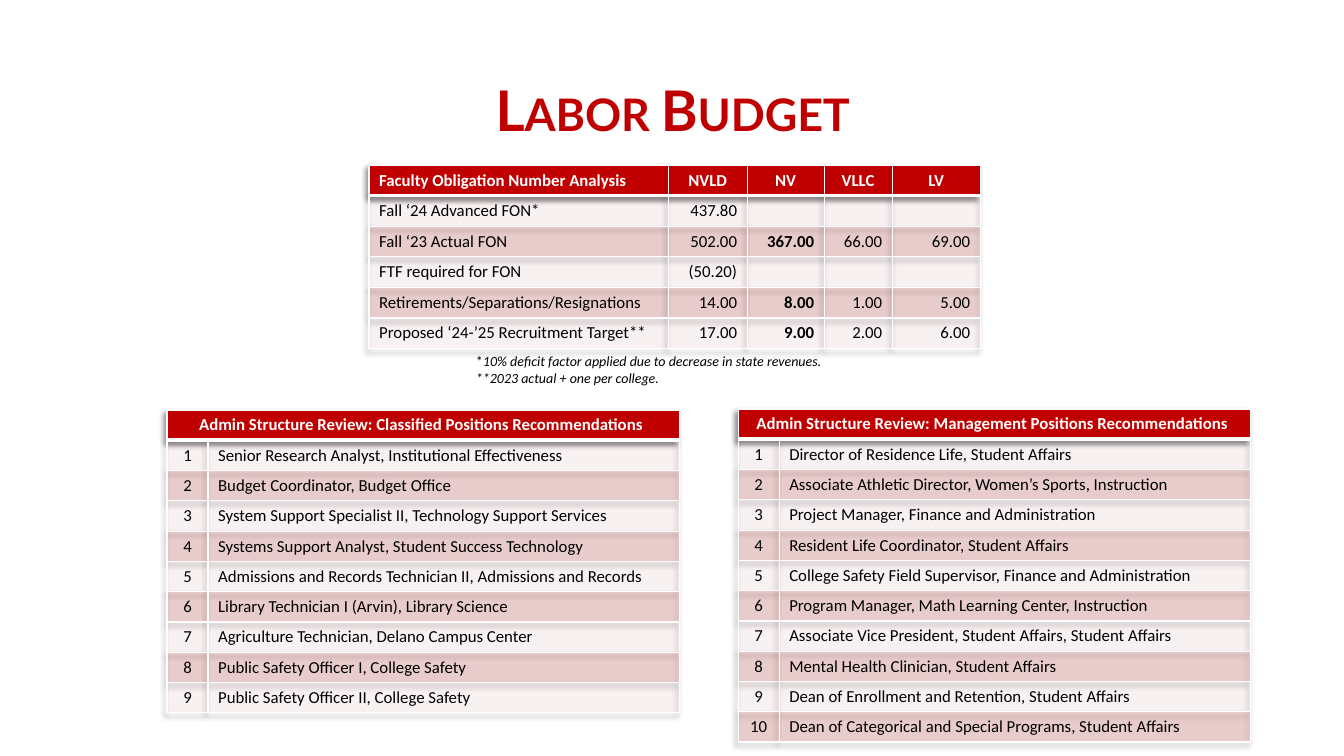
from pptx import Presentation
from pptx import util as u
from pptx.dml.color import RGBColor
from pptx.enum import text
from pptx.oxml import parse_xml
from pptx.oxml.ns import nsdecls

PX = 914400 / 100.8
THEME = {
    "red": "C00000", "white": "FFFFFF", "black": "000000",
    "heading": "Lato", "body": "Calibri",
    "title_size": 40, "table_size": 12, "note_size": 10,
    "odd_alpha": 4, "even_alpha": 15,
}
ROW = 30
LEFT, CENTER, RIGHT = text.PP_ALIGN.LEFT, text.PP_ALIGN.CENTER, text.PP_ALIGN.RIGHT


def write(paragraph, content, size=THEME["table_size"], font=THEME["body"],
          color=THEME["black"], bold=False, italic=False, align=LEFT):
    paragraph.alignment = align
    if not content:
        paragraph._p.append(parse_xml(f'<a:endParaRPr {nsdecls("a")} sz="{size * 100}"/>'))
        return None
    run = paragraph.add_run()
    run.text = content
    run.font.size = u.Pt(size)
    run.font.name = font
    run.font.color.rgb = RGBColor.from_string(color)
    run.font.bold = bold
    run.font.italic = italic
    return run


def add_grid(left, top, widths, rows, aligns, header_aligns, bold_column=None, merge_header=False):
    frame = slide.shapes.add_table(len(rows), len(widths), *[
        round(n * PX) for n in (left, top, sum(widths), ROW * len(rows))])
    grid = frame.table
    grid._tbl.tblPr.insert(0, parse_xml(
        f'<a:effectLst {nsdecls("a")}><a:outerShdw blurRad="50800" dist="38100" dir="8100000" '
        'algn="tr" rotWithShape="0"><a:prstClr val="black"><a:alpha val="40000"/></a:prstClr>'
        '</a:outerShdw></a:effectLst>'))
    for column, width in zip(grid.columns, widths):
        column.width = round(width * PX)
    if merge_header:
        grid.cell(0, 0).merge(grid.cell(0, len(widths) - 1))
    for r, row in enumerate(rows):
        grid.rows[r].height = round(ROW * PX)
        for c, content in enumerate(row):
            cell = grid.cell(r, c)
            header = r == 0
            write(cell.text_frame.paragraphs[0], content,
                  color=THEME["white" if header else "black"],
                  bold=header or c == bold_column,
                  align=(header_aligns if header else aligns)[c])
            cell.fill.solid()
            cell.fill.fore_color.rgb = RGBColor.from_string(THEME["red"])
            props = cell._tc.get_or_add_tcPr()
            if header:
                cell.vertical_anchor = text.MSO_ANCHOR.MIDDLE
            else:
                alpha = THEME["odd_alpha" if r % 2 else "even_alpha"]
                props[0][0].append(parse_xml(f'<a:alpha {nsdecls("a")} val="{alpha * 1000}"/>'))
            for i, side in enumerate("LRTB"):
                heavy = (header and side == "B") or (r == 1 and side == "T")
                props.insert(i, parse_xml(
                    f'<a:ln{side} {nsdecls("a")} w="{u.Pt(3 if heavy else 1)}"><a:solidFill>'
                    f'<a:srgbClr val="{THEME["white"]}"/></a:solidFill></a:ln{side}>'))


deck = Presentation()
deck.slide_width, deck.slide_height = u.Inches(13.33), u.Inches(7.5)
slide = deck.slides.add_slide(deck.slide_layouts[5])

heading = slide.shapes.title
heading.left, heading.top, heading.width, heading.height = [
    round(n * PX) for n in (93, 40, 1159, 146)]
heading.text_frame.auto_size = text.MSO_AUTO_SIZE.NONE
heading.text_frame.vertical_anchor = text.MSO_ANCHOR.MIDDLE
heading_line = heading.text_frame.paragraphs[0]
heading_line.line_spacing = 0.9
heading_run = write(heading_line, "Labor Budget", size=THEME["title_size"], font=THEME["heading"],
                    color=THEME["red"], bold=True, align=CENTER)
heading_run.font._element.set("cap", "small")

faculty_obligation = [
    ("Faculty Obligation Number Analysis", "NVLD", "NV", "VLLC", "LV"),
    ("Fall ‘24 Advanced FON*", "437.80", "", "", ""),
    ("Fall ‘23 Actual FON", "502.00", "367.00", "66.00", "69.00"),
    ("FTF required for FON", "(50.20)", "", "", ""),
    ("Retirements/Separations/Resignations", "14.00", "8.00", "1.00", "5.00"),
    ("Proposed ‘24-’25 Recruitment Target**", "17.00", "9.00", "2.00", "6.00"),
]
add_grid(369, 165, [299, 79, 77, 68, 88], faculty_obligation,
         [LEFT] + [RIGHT] * 4, [LEFT] + [CENTER] * 4, bold_column=2)

footnotes = slide.shapes.add_textbox(*[round(n * PX) for n in (466, 348, 694, 44)]).text_frame
footnotes.word_wrap = True
first_note = footnotes.paragraphs[0]
write(first_note, "*", size=THEME["note_size"])
write(first_note, "10% deficit factor applied due to decrease in state revenues.",
      size=THEME["note_size"], italic=True)
write(footnotes.add_paragraph(), "**2023 actual + one per college.",
      size=THEME["note_size"], italic=True)

classified = [
    "Senior Research Analyst, Institutional Effectiveness",
    "Budget Coordinator, Budget Office",
    "System Support Specialist II, Technology Support Services",
    "Systems Support Analyst, Student Success Technology",
    "Admissions and Records Technician II, Admissions and Records",
    "Library Technician I (Arvin), Library Science",
    "Agriculture Technician, Delano Campus Center",
    "Public Safety Officer I, College Safety",
    "Public Safety Officer II, College Safety",
]
management = [
    "Director of Residence Life, Student Affairs",
    "Associate Athletic Director, Women’s Sports, Instruction",
    "Project Manager, Finance and Administration",
    "Resident Life Coordinator, Student Affairs",
    "College Safety Field Supervisor, Finance and Administration",
    "Program Manager, Math Learning Center, Instruction",
    "Associate Vice President, Student Affairs, Student Affairs",
    "Mental Health Clinician, Student Affairs",
    "Dean of Enrollment and Retention, Student Affairs",
    "Dean of Categorical and Special Programs, Student Affairs",
]
for left, top, group, positions in [(167, 410, "Classified", classified),
                                    (738, 409, "Management", management)]:
    numbered = [(str(n), position) for n, position in enumerate(positions, 1)]
    review = f"Admin Structure Review: {group} Positions Recommendations "
    add_grid(left, top, [41, 471], [(review, "")] + numbered,
             [CENTER, LEFT], [CENTER, CENTER], merge_header=True)

deck.save("out.pptx")
